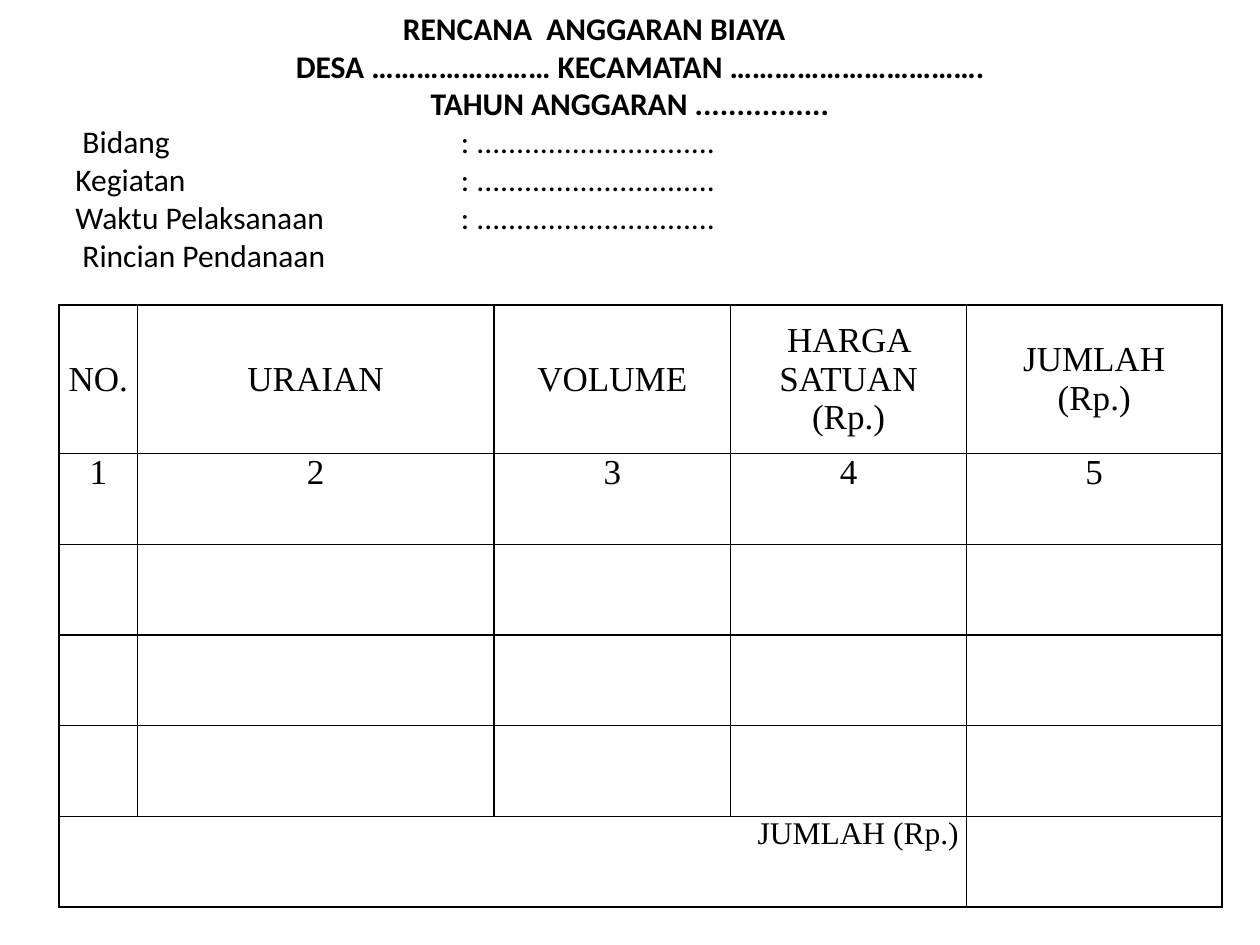
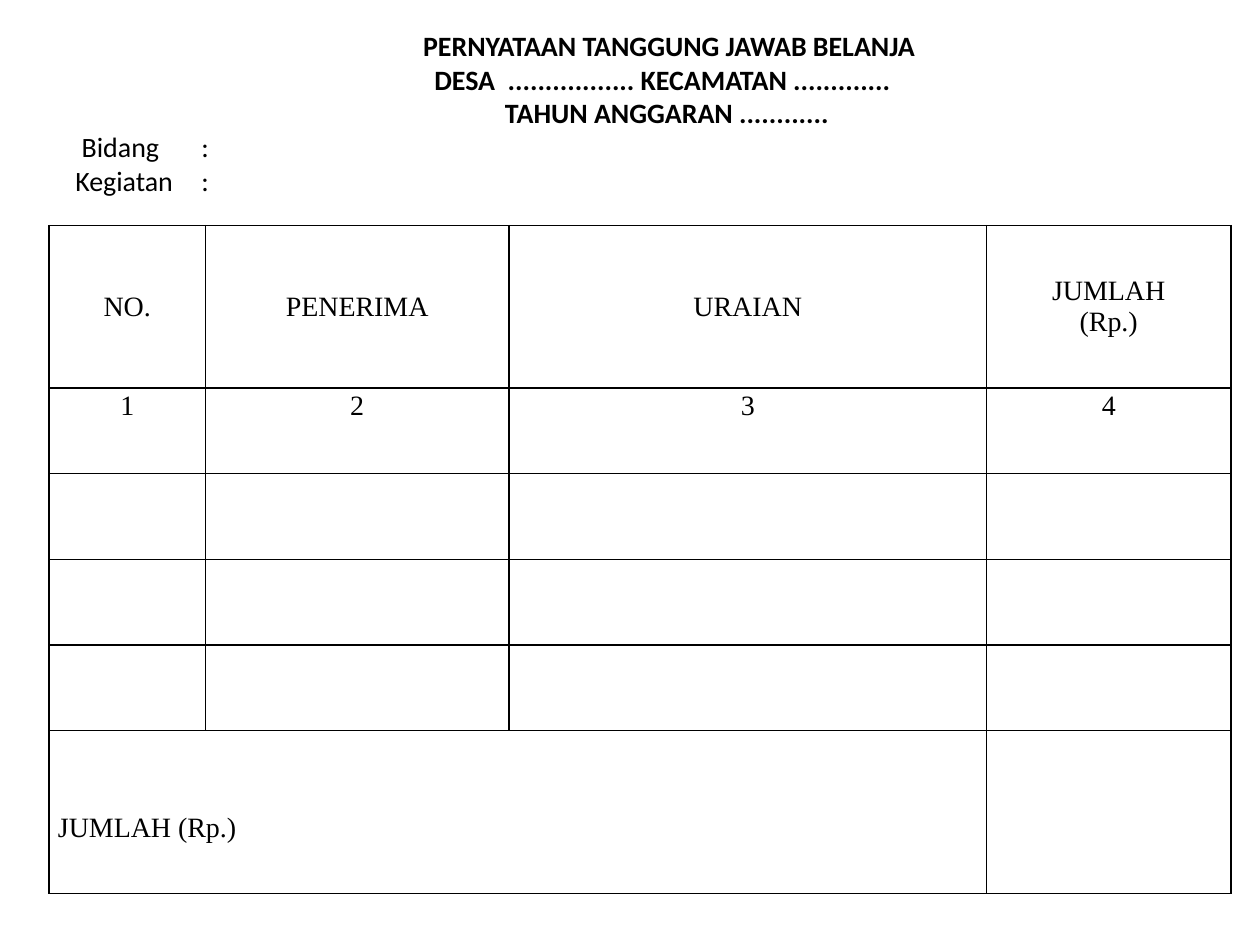
"""Build two village budget form slides, each with a heading and a ruled table."""
from dataclasses import dataclass

from lxml import etree
from pptx import Presentation
from pptx.dml.color import RGBColor
from pptx.enum.text import MSO_ANCHOR, PP_ALIGN
from pptx.oxml.ns import qn
from pptx.util import Inches, Pt

LEFT, CENTER, RIGHT = PP_ALIGN.LEFT, PP_ALIGN.CENTER, PP_ALIGN.RIGHT
TOP, MIDDLE = MSO_ANCHOR.TOP, MSO_ANCHOR.MIDDLE


@dataclass(frozen=True)
class Theme:
    ink: str = "000000"
    heading_font: str = "Calibri"
    table_font: str = "Times New Roman"
    border: float = 1
    large: int = 20
    medium: int = 18
    small: int = 16


THEME = Theme()

FORMS = [
    {
        "heading_box": (0.5, 0.16, 9, 2.2),
        "heading_size": THEME.medium,
        "heading_bottom": 0.33,
        "title_lines": [
            ("RENCANA  ANGGARAN BIAYA", 2.6),
            ("DESA …………………… KECAMATAN …………………………….", 1.75),
            ("TAHUN ANGGARAN ................", 2.82),
        ],
        "field_lines": [
            " Bidang\t: ..............................",
            "Kegiatan\t: ..............................",
            "Waktu Pelaksanaan\t: ..............................",
            " Rincian Pendanaan",
        ],
        "field_tab": 3.06,
        "table_at": (0.47, 2.42),
        "columns": [0.62, 2.83, 1.88, 1.87, 2.03],
        "rows": [1.18] + [0.72] * 5,
        "headers": ["NO.", "URAIAN", "VOLUME", "HARGA SATUAN\n(Rp.)", "JUMLAH\n(Rp.)"],
        "table_size": THEME.large,
        "margins": (0.06, 0),
        "total": {"size": THEME.medium, "align": RIGHT},
        "total_anchor": TOP,
        "total_top": 0,
    },
    {
        "heading_box": (0.5, 0.39, 9, 1.25),
        "heading_size": THEME.small,
        "heading_bottom": 0.29,
        "title_lines": [
            ("PERNYATAAN TANGGUNG JAWAB BELANJA", 2.76),
            ("DESA  ................. KECAMATAN .............", 2.85),
            ("TAHUN ANGGARAN ............", 3.41),
        ],
        "field_lines": [" Bidang\t:", "Kegiatan\t:"],
        "field_tab": 1,
        "table_at": (0.39, 1.79),
        "columns": [1.24, 2.41, 3.79, 1.94],
        "rows": [1.29] + [0.68] * 4 + [1.29],
        "headers": ["NO.", "PENERIMA", "URAIAN", "JUMLAH\n(Rp.)"],
        "table_size": THEME.small,
        "margins": (0.07, 0.02),
        "total": {"size": THEME.small, "align": LEFT},
        "total_anchor": MIDDLE,
        "total_top": 0.27,
    },
]


def write(frame, text, font, size, bold=False, align=LEFT, indent=0, tab=None):
    for line in text.split("\n"):
        para = frame.paragraphs[0] if not frame.text else frame.add_paragraph()
        para.alignment = align
        properties = para._p.get_or_add_pPr()
        properties.set("marL", str(Inches(indent)))
        if tab:
            tabs = etree.SubElement(properties, qn("a:tabLst"))
            etree.SubElement(tabs, qn("a:tab"), pos=str(Inches(tab)), algn="l")
        span = para.add_run()
        span.text = line
        span.font.name = font
        span.font.size = Pt(size)
        span.font.bold = bold
        span.font.color.rgb = RGBColor.from_string(THEME.ink)


def rule_cell(cell):
    cell.fill.background()
    properties = cell._tc.get_or_add_tcPr()
    for position, side in enumerate(("a:lnL", "a:lnR", "a:lnT", "a:lnB")):
        line = etree.Element(qn(side), w=str(Pt(THEME.border)))
        fill = etree.SubElement(line, qn("a:solidFill"))
        etree.SubElement(fill, qn("a:srgbClr"), val=THEME.ink)
        properties.insert(position, line)


deck = Presentation()
deck.slide_width, deck.slide_height = Inches(10), Inches(7.5)

for form in FORMS:
    page = deck.slides.add_slide(deck.slide_layouts[6])

    box = page.shapes.add_textbox(*map(Inches, form["heading_box"]))
    frame = box.text_frame
    frame.word_wrap = True
    frame.vertical_anchor = MIDDLE
    frame.margin_bottom = Inches(form["heading_bottom"])
    heading = {"font": THEME.heading_font, "size": form["heading_size"]}
    for text, indent in form["title_lines"]:
        write(frame, text, bold=True, indent=indent, **heading)
    for text in form["field_lines"]:
        write(frame, text, tab=form["field_tab"], **heading)

    columns, rows = form["columns"], form["rows"]
    left, top = form["table_at"]
    table = page.shapes.add_table(
        len(rows), len(columns), Inches(left), Inches(top),
        Inches(sum(columns)), Inches(sum(rows))).table
    table.first_row = table.horz_banding = False
    for column, width in zip(table.columns, columns):
        column.width = Inches(width)
    for row, height in zip(table.rows, rows):
        row.height = Inches(height)

    side_margin, edge_margin = form["margins"]
    for cell in table.iter_cells():
        rule_cell(cell)
        cell.margin_left = cell.margin_right = Inches(side_margin)
        cell.margin_top = cell.margin_bottom = Inches(edge_margin)

    body = {"font": THEME.table_font, "size": form["table_size"], "align": CENTER}
    for index, header in enumerate(form["headers"]):
        header_cell = table.cell(0, index)
        header_cell.vertical_anchor = MIDDLE
        write(header_cell.text_frame, header, **body)
        write(table.cell(1, index).text_frame, str(index + 1), **body)

    last_row = len(rows) - 1
    total_cell = table.cell(last_row, 0)
    total_cell.merge(table.cell(last_row, len(columns) - 2))
    total_cell.vertical_anchor = form["total_anchor"]
    total_cell.margin_top = Inches(form["total_top"])
    write(total_cell.text_frame, "JUMLAH (Rp.)", font=THEME.table_font, **form["total"])

deck.save("out.pptx")
